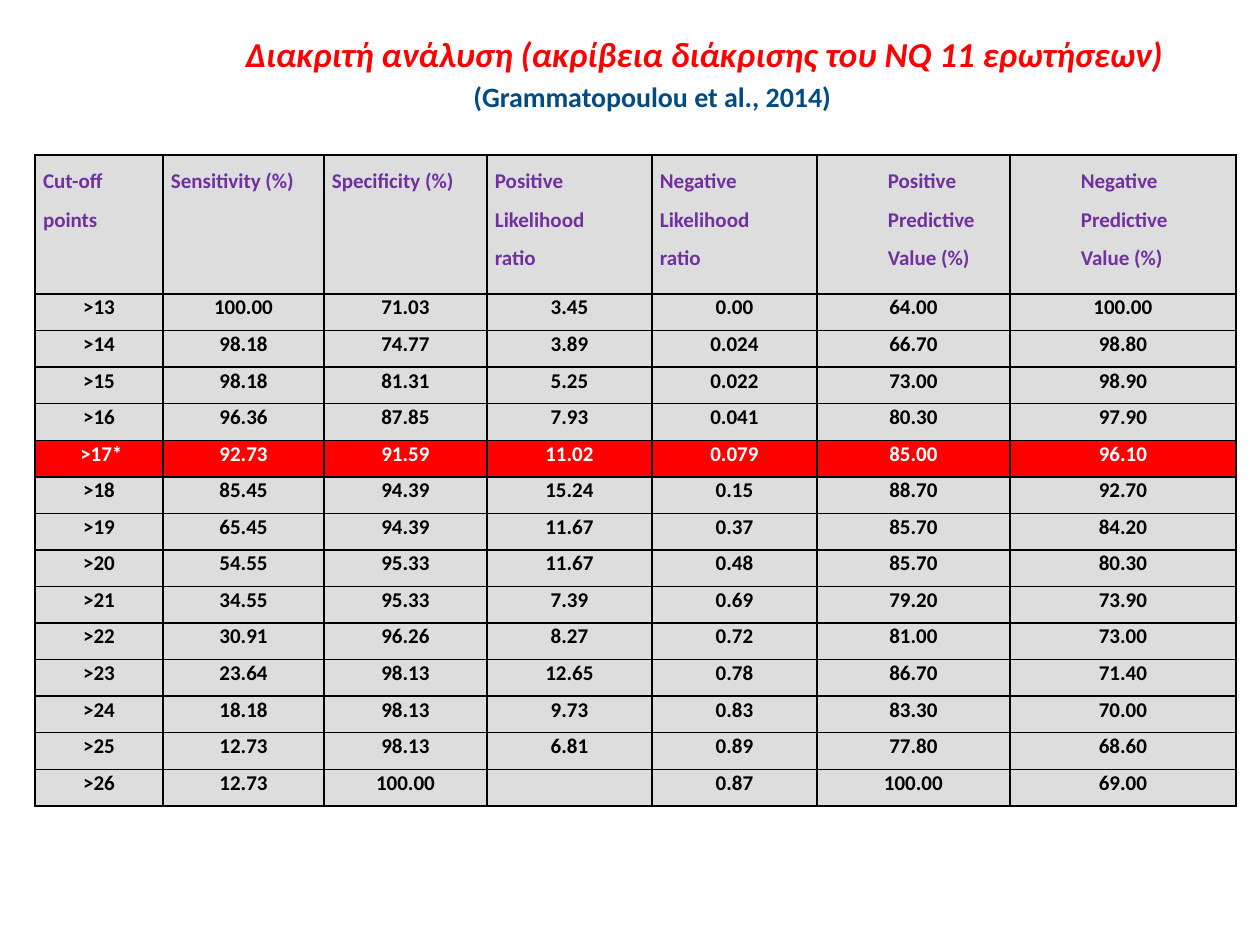
import pptx
import pptx.dml.color
import pptx.enum.text
import pptx.oxml.ns
import pptx.util
from lxml import etree

SCALE = 914400 // 126
FONT = "Calibri"
COLUMN_WIDTHS = [128, 161, 163, 165, 165, 193, 226]
HEADER_HEIGHT = 139
BODY_HEIGHT = 512
FIRST_INDENTED_COLUMN = 5
HIGHLIGHTED_ROW = 5
HEADERS = [
    ["Cut-off", "points"],
    ["Sensitivity (%)"],
    ["Specificity (%)"],
    ["Positive", "Likelihood", "ratio"],
    ["Negative", "Likelihood", "ratio"],
    ["Positive", "Predictive", "Value (%)"],
    ["Negative", "Predictive", "Value (%)"],
]
RESULTS = [
    [">13", "100.00", "71.03", "3.45", "0.00", "64.00", "100.00"],
    [">14", "98.18", "74.77", "3.89", "0.024", "66.70", "98.80"],
    [">15", "98.18", "81.31", "5.25", "0.022", "73.00", "98.90"],
    [">16", "96.36", "87.85", "7.93", "0.041", "80.30", "97.90"],
    [" >17*", "92.73", "91.59", "11.02", "0.079", "85.00", "96.10"],
    [">18", "85.45", "94.39", "15.24", "0.15", "88.70", "92.70"],
    [">19", "65.45", "94.39", "11.67", "0.37", "85.70", "84.20"],
    [">20", "54.55", "95.33", "11.67", "0.48", "85.70", "80.30"],
    [">21", "34.55", "95.33", "7.39", "0.69", "79.20", "73.90"],
    [">22", "30.91", "96.26", "8.27", "0.72", "81.00", "73.00"],
    [">23", "23.64", "98.13", "12.65", "0.78", "86.70", "71.40"],
    [">24", "18.18", "98.13", "9.73", "0.83", "83.30", "70.00"],
    [">25", "12.73", "98.13", "6.81", "0.89", "77.80", "68.60"],
    [">26", "12.73", "100.00", "", "0.87", "100.00", "69.00"],
]


def px(length):
    return pptx.util.Emu(length * SCALE)


def colour(value):
    return pptx.dml.color.RGBColor.from_string(value)


def add_span(para, text, size, hex_colour, italic=False):
    span = para.add_run()
    span.text = text
    span.font.name = FONT
    span.font.size = pptx.util.Pt(size)
    span.font.bold = True
    span.font.italic = italic
    span.font.color.rgb = colour(hex_colour)


def place(box, left, top, width, height):
    box.left, box.top = px(left), px(top)
    box.width, box.height = px(width), px(height)


def add_title(page):
    box = page.shapes.title
    place(box, 233, 26, 951, 55)
    frame = box.text_frame
    frame.word_wrap = False
    frame.auto_size = pptx.enum.text.MSO_AUTO_SIZE.SHAPE_TO_FIT_TEXT
    frame.vertical_anchor = pptx.enum.text.MSO_ANCHOR.TOP
    para = frame.paragraphs[0]
    para.alignment = pptx.enum.text.PP_ALIGN.LEFT
    add_span(para, "Διακριτή ανάλυση (ακρίβεια διάκρισης του NQ 11 ερωτήσεων)",
             20, "FF0000", italic=True)


def add_citation(page):
    box = page.shapes.add_textbox(px(461), px(77), px(630), px(43))
    frame = box.text_frame
    frame.word_wrap = True
    frame.auto_size = pptx.enum.text.MSO_AUTO_SIZE.SHAPE_TO_FIT_TEXT
    para = frame.paragraphs[0]
    para.line_spacing = 0.9
    add_span(para, "(Grammatopoulou et al., 2014)", 16, "004B82")


def add_borders(cell):
    properties = cell._tc.get_or_add_tcPr()
    for position, side in enumerate(["lnL", "lnR", "lnT", "lnB"]):
        line = etree.Element(pptx.oxml.ns.qn(f"a:{side}"), w="12700")
        fill = etree.SubElement(line, pptx.oxml.ns.qn("a:solidFill"))
        etree.SubElement(fill, pptx.oxml.ns.qn("a:srgbClr"), val="000000")
        properties.insert(position, line)


def format_cell(cell, fill):
    cell.margin_left = cell.margin_right = px(8)
    cell.margin_top = cell.margin_bottom = px(1)
    cell.fill.solid()
    cell.fill.fore_color.rgb = colour(fill)
    add_borders(cell)


def fill_header(cell, lines, indented):
    format_cell(cell, "DDDDDD")
    frame = cell.text_frame
    for number, line in enumerate(lines):
        para = frame.add_paragraph() if number else frame.paragraphs[0]
        para.line_spacing = 1.5
        if indented:
            para._p.get_or_add_pPr().set("indent", str(px(63)))
        add_span(para, line, 12, "7030A0")


def fill_result(cell, text, highlighted):
    format_cell(cell, "FF0000" if highlighted else "DDDDDD")
    para = cell.text_frame.paragraphs[0]
    para.alignment = pptx.enum.text.PP_ALIGN.CENTER
    if text:
        add_span(para, text, 12, "FFFFFF" if highlighted else "000000")
    else:
        etree.SubElement(para._p, pptx.oxml.ns.qn("a:endParaRPr"), sz="1200")


def add_results_table(page):
    table = page.shapes.add_table(
        len(RESULTS) + 1, len(HEADERS), px(35), px(155),
        px(sum(COLUMN_WIDTHS)), px(HEADER_HEIGHT + BODY_HEIGHT)).table
    table.first_row = False
    table.horz_banding = False
    for column, width in zip(table.columns, COLUMN_WIDTHS):
        column.width = px(width)
    for number, row in enumerate(table.rows):
        row.height = px(BODY_HEIGHT) // len(RESULTS) if number else px(HEADER_HEIGHT)
    for column, lines in enumerate(HEADERS):
        fill_header(table.cell(0, column), lines, column >= FIRST_INDENTED_COLUMN)
    for row, values in enumerate(RESULTS, 1):
        for column, text in enumerate(values):
            fill_result(table.cell(row, column), text, row == HIGHLIGHTED_ROW)


def main():
    deck = pptx.Presentation()
    deck.slide_width, deck.slide_height = px(1260), px(945)
    page = deck.slides.add_slide(deck.slide_layouts[5])
    add_results_table(page)
    add_title(page)
    add_citation(page)
    deck.save("out.pptx")


if __name__ == "__main__":
    main()
